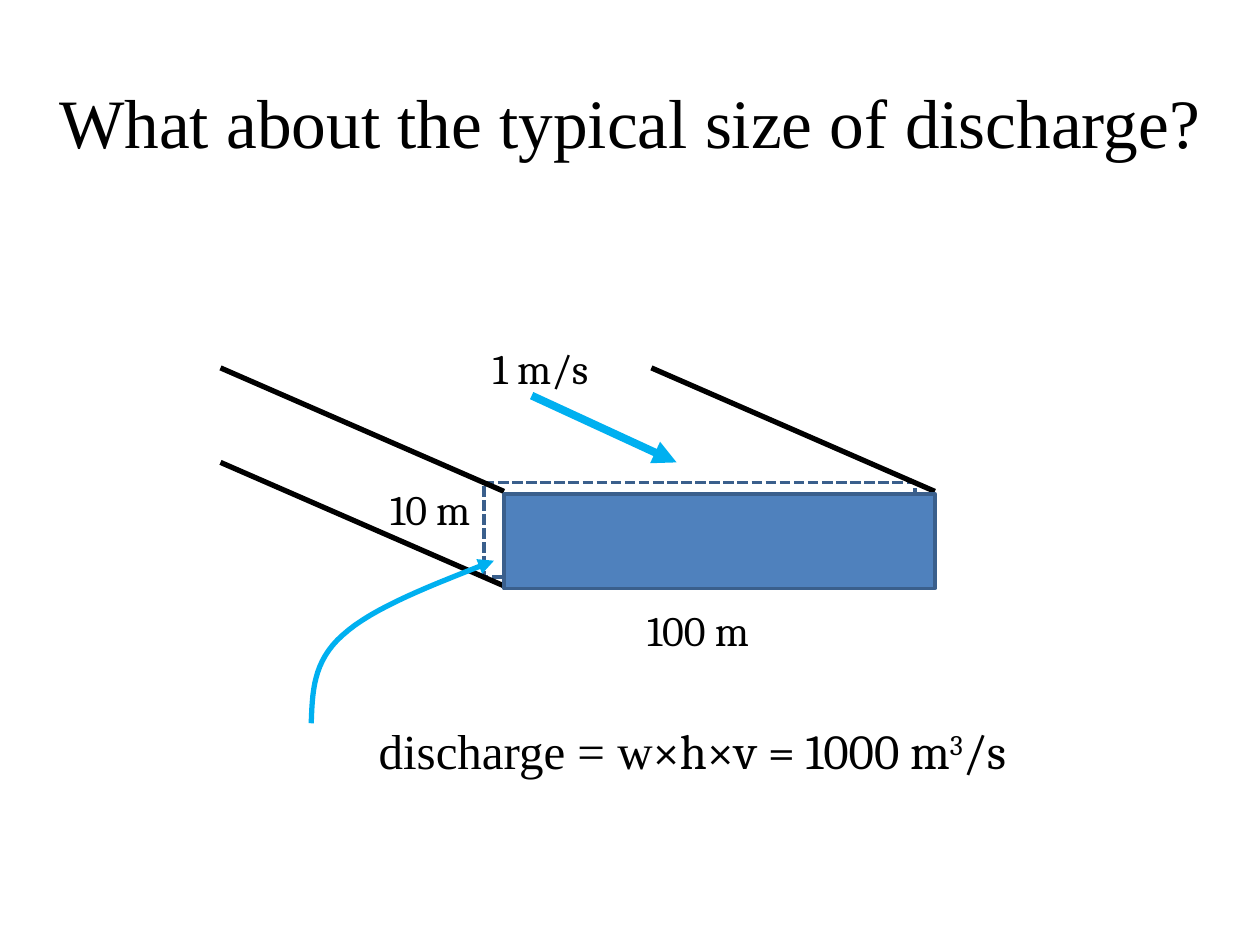
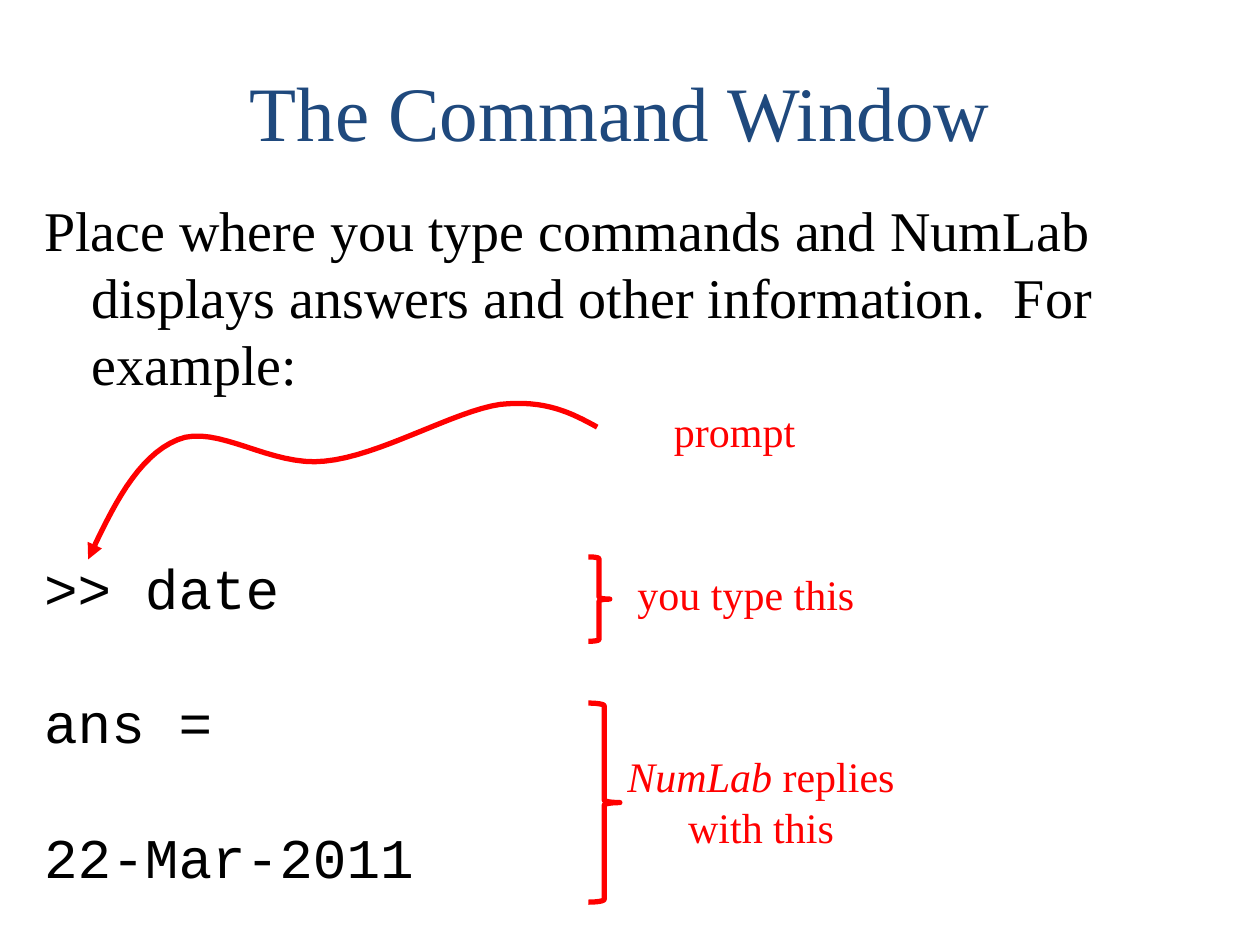
from pptx import Presentation, util as u
from pptx.dml.color import RGBColor
from pptx.enum import dml, shapes, text
from pptx.oxml import ns
from lxml import etree

PX = 9144
SERIF, LABEL, CODE = "Times New Roman", "Cambria", "Courier New"
BLACK, RED, SKY, NAVY = "000000", "FF0000", "00B0F0", "1F497D"
WATER, EDGE = "4F81BD", "3A5F8C"
PROGRAM = "NumLab"


def px(*lengths):
    """Turn whole px into EMU."""
    return [u.Emu(round(length * PX)) for length in lengths]


def color(hex_code):
    """Return the colour for a hex string."""
    return RGBColor.from_string(hex_code)


def style_font(font, size, name, hex_code):
    """Set size in points, typeface and colour."""
    font.size, font.name = u.Pt(size), name
    font.color.rgb = color(hex_code)


def style_line(outline, hex_code, width, arrow=None):
    """Colour a line and put an optional arrowhead on its head or tail."""
    outline.color.rgb, outline.width = color(hex_code), u.Pt(width)
    if arrow:
        end = etree.SubElement(outline._get_or_add_ln(), ns.qn(f"a:{arrow}End"))
        end.set("type", "triangle")


def place_title(slide, box, words, size, hex_code):
    """Move and format the title placeholder."""
    title = slide.shapes.title
    title.left, title.top, title.width, title.height = px(*box)
    frame = title.text_frame
    frame.text, frame.auto_size = words, text.MSO_AUTO_SIZE.NONE
    frame.vertical_anchor = text.MSO_ANCHOR.MIDDLE
    frame.paragraphs[0].alignment = text.PP_ALIGN.CENTER
    style_font(frame.paragraphs[0].font, size, SERIF, hex_code)


def add_label(slide, box, pieces, size, name, hex_code):
    """Add a centred label and return its runs."""
    frame = slide.shapes.add_textbox(*px(*box)).text_frame
    frame.word_wrap = True
    frame.vertical_anchor = text.MSO_ANCHOR.MIDDLE
    paragraph = frame.paragraphs[0]
    paragraph.alignment = text.PP_ALIGN.CENTER
    style_font(paragraph.font, size, name, hex_code)
    for piece in pieces:
        paragraph.add_run().text = piece
    return paragraph.runs


def add_outline(slide, kind, box, hex_code, width, fill=None):
    """Add a preset shape, hollow unless a fill is given."""
    shape = slide.shapes.add_shape(kind, *px(*box))
    shape.shadow.inherit = False
    style_line(shape.line, hex_code, width)
    if fill:
        shape.fill.solid()
        shape.fill.fore_color.rgb = color(fill)
    else:
        shape.fill.background()
    return shape


def add_line(slide, start, end, hex_code, width, arrow=None):
    """Add a straight line without a shadow."""
    line = slide.shapes.add_connector(shapes.MSO_CONNECTOR.STRAIGHT, *px(*start, *end))
    style_line(line.line, hex_code, width, arrow)
    etree.SubElement(line._element.spPr, ns.qn("a:effectLst"))


def add_curve(slide, knots, hex_code, steps=16):
    """Draw a chain of cubic curves with an arrowhead at its first point."""
    points = []
    for i in range(0, len(knots) - 1, 3):
        for step in range(1, steps + 1):
            t = step / steps
            weights = ((1 - t) ** 3, 3 * t * (1 - t) ** 2, 3 * t * t * (1 - t), t ** 3)
            points.append(px(*(sum(w * knot[axis] for w, knot in zip(weights, knots[i:i + 4]))
                               for axis in (0, 1))))
    builder = slide.shapes.build_freeform(*px(*knots[0]))
    builder.add_line_segments(points, close=False)
    curve = builder.convert_to_shape()
    curve.shadow.inherit = False
    curve.fill.background()
    style_line(curve.line, hex_code, 3, "head")


def draw_channel(slide, box):
    """Draw the river channel whose front face fills the box."""
    left, top, width, height = box
    rectangle = shapes.MSO_SHAPE.RECTANGLE
    upstream = add_outline(slide, rectangle, (left - 16, top - 9, width, height), EDGE, 2)
    upstream.line.dash_style = dml.MSO_LINE.SQUARE_DOT
    for x, y in ((left, top + height - 2), (left, top - 2), (left + width, top - 2)):
        add_line(slide, (x, y), (x - 225, y - 98), BLACK, 3)
    labels = (("10 m", (-117, -17, 117, 58)), ("100 m", (75, 79, 158, 58)),
              ("1 m/s", (-42, -134, 142, 67)))
    for words, (x, y, w, h) in labels:
        add_label(slide, (left + x, top + y, w, h), [words], 24, LABEL, BLACK)
    add_line(slide, (left + 22, top - 78), (left + 137, top - 25), SKY, 4.5, "tail")
    add_outline(slide, rectangle, box, EDGE, 2, WATER)
    pointer = ((-8, 53), (-56, 72), (-104, 90), (-128, 112),
               (-152, 133), (-152, 158), (-153, 182))
    add_curve(slide, [(left + x, top + y) for x, y in pointer], SKY)


def write_formula(slide, box):
    """Write the discharge formula."""
    runs = add_label(slide, box, ["discharge = w", "×h×v = 1000 m", "3", "/s"],
                     28, LABEL, BLACK)
    runs[0].font.name = SERIF
    runs[2]._r.get_or_add_rPr().set("baseline", "30000")


def write_session(slide, box):
    """Fill the body with the explanation and the command session."""
    body = slide.placeholders[1]
    body.left, body.top, body.width, body.height = px(*box)
    frame = body.text_frame
    frame.auto_size = text.MSO_AUTO_SIZE.NONE
    lines = ((f"Place where you type commands and {PROGRAM} displays answers "
              "and other information.  For example:", SERIF, 0),
             (">> date", CODE, 89.5), ("ans =", CODE, 38.4), ("22-Mar-2011", CODE, 38.4))
    frame.text = "\n".join(line[0] for line in lines)
    for paragraph, (_, name, gap) in zip(frame.paragraphs, lines):
        style_font(paragraph.font, 32, name, BLACK)
        paragraph.line_spacing, paragraph.space_before = u.Pt(38.4), u.Pt(gap)
        properties = paragraph._p.get_or_add_pPr()
        indent, = px(38)
        properties.set("marL", str(indent))
        properties.set("indent", str(-indent))
        properties.insert_element_before(etree.Element(ns.qn("a:buNone")),
                                         "a:tabLst", "a:defRPr", "a:extLst")


def annotate_session(slide, box):
    """Add the red notes, braces and prompt arrow from the corner of the box."""
    left, top = box[:2]
    notes = ((["prompt"], (433, 167, 250, 50)),
             (["you type this"], (442, 296, 250, 50)),
             ([PROGRAM, " replies with this"], (458, 461, 242, 50)))
    for pieces, (x, y, w, h) in notes:
        runs = add_label(slide, (left + x, top + y, w, h), pieces, 24, SERIF, RED)
    runs[0].font.italic = True
    for y, w, h in ((292, 17, 67), (408, 25, 158)):
        add_outline(slide, shapes.MSO_SHAPE.RIGHT_BRACE, (left + 442, top + y, w, h), RED, 3)
    pointer = ((45, 294), (64, 253), (84, 212), (116, 199), (147, 186), (190, 221),
               (233, 216), (276, 212), (336, 176), (372, 171), (408, 167), (429, 178),
               (449, 189))
    add_curve(slide, [(left + x, top + y) for x, y in pointer], RED)


def build_discharge(deck):
    """Build the slide on the size of discharge."""
    slide = deck.slides.add_slide(deck.slide_layouts[5])
    place_title(slide, (0, 33, 1000, 125), "What about the typical size of discharge?",
                39.6, BLACK)
    draw_channel(slide, (400, 392, 342, 75))
    write_formula(slide, (208, 533, 683, 125))


def build_command_window(deck):
    """Build the slide on the command window."""
    slide = deck.slides.add_slide(deck.slide_layouts[1])
    session = (25, 150, 975, 575)
    place_title(slide, (42, 25, 900, 125), "The Command Window", 44, NAVY)
    write_session(slide, session)
    annotate_session(slide, session)


def main():
    """Build and save both slides."""
    deck = Presentation()
    deck.slide_width, deck.slide_height = px(1000, 750)
    build_discharge(deck)
    build_command_window(deck)
    deck.save("out.pptx")


if __name__ == "__main__":
    main()
